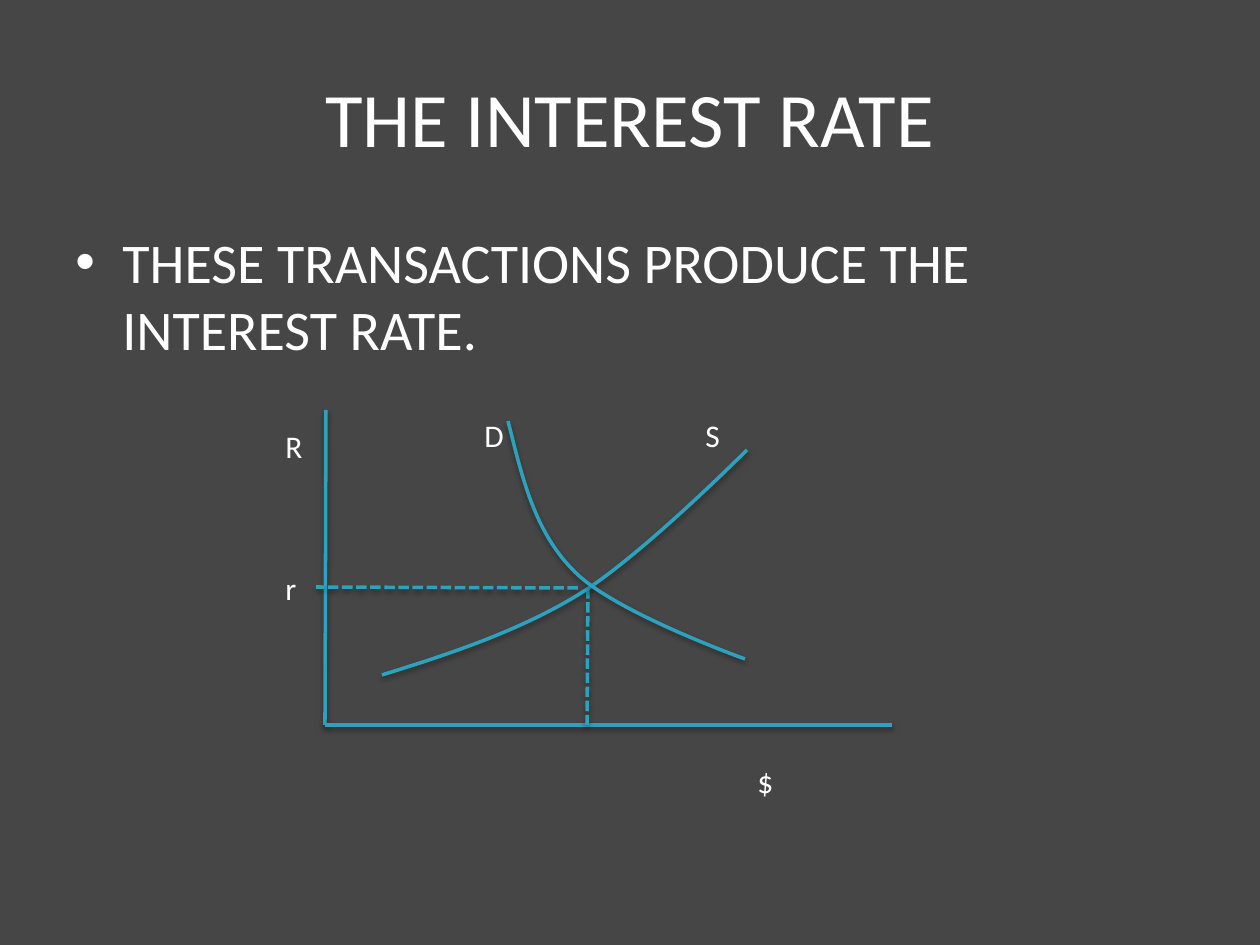
import pptx
import pptx.util
from lxml import etree
from pptx.dml.color import RGBColor
from pptx.enum.dml import MSO_LINE
from pptx.enum.shapes import MSO_CONNECTOR
from pptx.enum.text import MSO_ANCHOR, PP_ALIGN
from pptx.oxml import parse_xml
from pptx.oxml.ns import nsdecls, qn

PX = 914400 / 126
BACKGROUND = RGBColor(0x46, 0x46, 0x46)
WHITE = RGBColor(0xFF, 0xFF, 0xFF)
TEAL = RGBColor(0x2D, 0xA2, 0xBF)
CURVE_STEPS = 24
SHADOW = (
    f'<a:effectLst {nsdecls("a")}><a:outerShdw blurRad="40000" dist="20000" '
    'dir="5400000" rotWithShape="0"><a:srgbClr val="000000">'
    '<a:alpha val="38000"/></a:srgbClr></a:outerShdw></a:effectLst>'
)


def style_stroke(stroke):
    stroke.line.color.rgb = TEAL
    stroke.line.width = pptx.util.Pt(2)
    stroke._element.spPr.append(parse_xml(SHADOW))


def add_text(words, size, left, top, width, height):
    box = slide.shapes.add_textbox(*(round(n * PX) for n in (left, top, width, height)))
    box.text_frame.word_wrap = True
    run = box.text_frame.paragraphs[0].add_run()
    run.text = words
    run.font.name = "Calibri"
    run.font.size = pptx.util.Pt(size)
    run.font.color.rgb = WHITE
    return box.text_frame


deck = pptx.Presentation()
deck.slide_width = round(1260 * PX)
deck.slide_height = round(945 * PX)
slide = deck.slides.add_slide(deck.slide_layouts[6])
slide.background.fill.solid()
slide.background.fill.fore_color.rgb = BACKGROUND

# Title
title = add_text("THE INTEREST RATE", 44, 63, 38, 1134, 158)
title.vertical_anchor = MSO_ANCHOR.MIDDLE
title.paragraphs[0].alignment = PP_ALIGN.CENTER

# Bulleted statement
statement = add_text("THESE TRANSACTIONS PRODUCE THE INTEREST RATE.", 32, 63, 221, 1134, 624)
bullet_format = statement.paragraphs[0]._p.get_or_add_pPr()
bullet_format.set("marL", str(round(47 * PX)))
bullet_format.set("indent", str(round(-47 * PX)))
etree.SubElement(bullet_format, qn("a:buFont")).set("typeface", "Arial")
etree.SubElement(bullet_format, qn("a:buChar")).set("char", "•")

# Axes, then dashed guides to the equilibrium
for x1, y1, x2, y2, dashed in (
    (326, 410, 325, 725, False),
    (325, 725, 892, 725, False),
    (588, 588, 587, 725, True),
    (578, 588, 316, 587, True),
):
    axis = slide.shapes.add_connector(
        MSO_CONNECTOR.STRAIGHT, *(round(n * PX) for n in (x1, y1, x2, y2)))
    if dashed:
        axis.line.dash_style = MSO_LINE.SQUARE_DOT
    style_stroke(axis)

# Supply and demand: chained cubic curves, each sharing its end with the next
supply = [(382, 675), (450, 654), (519, 631), (578, 595),
          (639, 558), (741, 456), (747, 450)]
demand = [(508, 421), (522, 476), (534, 532), (575, 572),
          (614, 612), (745, 659), (745, 659)]
for controls in (supply, demand):
    points = []
    for first in range(0, len(controls) - 1, 3):
        a, b, c, d = controls[first:first + 4]
        for step in range(1, CURVE_STEPS + 1):
            t = step / CURVE_STEPS
            u = 1 - t
            points.append(tuple(
                PX * (u**3 * a[i] + 3 * u * u * t * b[i] + 3 * u * t * t * c[i] + t**3 * d[i])
                for i in (0, 1)))
    builder = slide.shapes.build_freeform(controls[0][0] * PX, controls[0][1] * PX)
    builder.add_line_segments(points, close=False)
    curve = builder.convert_to_shape()
    curve.fill.background()
    style_stroke(curve)

# Curve and axis labels
for label, left, top, width in (
    ("D", 472, 410, 63),
    ("S", 693, 410, 52),
    ("R", 273, 421, 43),
    ("$", 745, 756, 147),
    ("r", 273, 563, 43),
):
    add_text(label, 18, left, top, width, 50)

deck.save("out.pptx")
